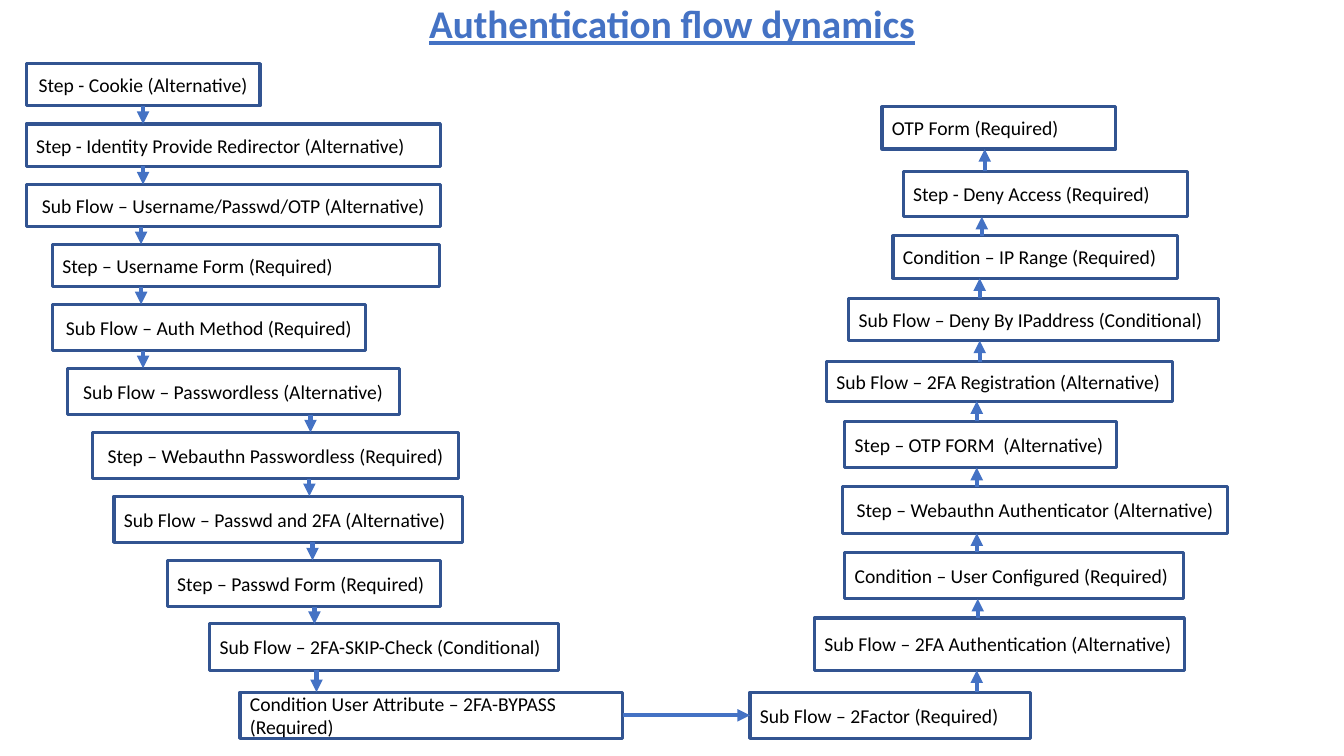
from dataclasses import dataclass
from itertools import pairwise

from lxml.etree import SubElement
from pptx import Presentation
from pptx.dml.color import RGBColor
from pptx.enum.shapes import MSO_CONNECTOR, MSO_SHAPE
from pptx.enum.text import MSO_ANCHOR, PP_ALIGN
from pptx.oxml.ns import qn
from pptx.shapes.autoshape import Shape
from pptx.shapes.connector import Connector
from pptx.slide import Slide
from pptx.text.text import Font
from pptx.util import Pt

HUES = {"blue": "4472C4", "navy": "325491", "white": "FFFFFF", "black": "000000"}
FACE = "Calibri"
TOP, LEFT, BOTTOM, RIGHT = range(4)


@dataclass(frozen=True)
class Step:
    """A box of the flow and the x of the arrow that leaves it."""
    text: str
    left: float
    top: float
    width: float
    height: float
    exit: float = 0
    mid: bool = False


DOWN = [
    Step("Step - Cookie (Alternative)", 18.7, 45.4, 167, 30.2, 102.2, True),
    Step("Step - Identity Provide Redirector (Alternative)", 18.7, 88.6, 295.9, 30.2, 102.2),
    Step("Sub Flow – Username/Passwd/OTP (Alternative)", 18.7, 131.8, 295.9, 30.2, 100.8, True),
    Step("Step – Username Form (Required)", 37.4, 174.5, 276.8, 30.2, 100.8),
    Step("Sub Flow – Auth Method (Required)", 37.4, 217.4, 223.9, 33.1, 102.2, True),
    Step("Sub Flow – Passwordless (Alternative)", 48.2, 263, 236.9, 33.1, 221.8, True),
    Step("Step – Webauthn Passwordless (Required)", 66.2, 308.9, 261.4, 33.1, 221, True),
    Step("Sub Flow – Passwd and 2FA (Alternative)", 81.4, 354.4, 249.1, 33.1, 223.2),
    Step("Step – Passwd Form (Required)", 119.5, 400.3, 195.1, 33.1, 224.6),
    Step("Sub Flow – 2FA-SKIP-Check (Conditional)", 149.8, 445.7, 249.1, 33.1, 226.1),
    Step("Condition User Attribute – 2FA-BYPASS (Required)", 171.4, 494.4, 273.6, 33.1),
]
UP = [
    Step("Sub Flow – 2Factor (Required)", 535.7, 494.4, 200.2, 33.1, 697.7),
    Step("Sub Flow – 2FA Authentication (Alternative)", 581.8, 441.4, 264.2, 37.4, 698.4),
    Step("Condition – User Configured (Required)", 603.4, 394.6, 241.9, 33.1, 697.7),
    Step("Step – Webauthn Authenticator (Alternative)", 601.9, 347.8, 275, 33.1, 697.7, True),
    Step("Step – OTP FORM  (Alternative)", 603.4, 301, 194.4, 33.1, 697.7),
    Step("Sub Flow – 2FA Registration (Alternative)", 590.4, 258.5, 247, 28.1, 699.8),
    Step("Sub Flow – Deny By IPaddress (Conditional)", 606.2, 213.1, 264.2, 30.2, 699.8),
    Step("Condition – IP Range (Required)", 637.9, 168.5, 203, 30.2, 701.3),
    Step("Step - Deny Access (Required)", 645.1, 122.4, 203, 32.4, 703.4),
    Step("OTP Form (Required)", 630, 76.3, 167, 30.2),
]


def hue(name: str) -> RGBColor:
    """Look up a colour by name."""
    return RGBColor.from_string(HUES[name])


def style(font: Font, size: float, tint: str) -> None:
    """Set face, size and colour of a font."""
    font.name, font.size = FACE, Pt(size)
    font.color.rgb = hue(tint)


def add_head(slide: Slide, width: int, height: int) -> None:
    """Fill and format the title."""
    title = slide.shapes.title
    title.left, title.top, title.width, title.height = 0, 0, width, height
    frame = title.text_frame
    frame.vertical_anchor = MSO_ANCHOR.TOP
    line = frame.paragraphs[0]
    line.alignment, line.line_spacing = PP_ALIGN.CENTER, 0.9
    run = line.add_run()
    run.text = "Authentication flow dynamics"
    style(run.font, 28, "blue")
    run.font.bold = run.font.underline = True


def add_box(slide: Slide, step: Step) -> Shape:
    """Draw the box of one step."""
    box = slide.shapes.add_shape(MSO_SHAPE.RECTANGLE, Pt(step.left), Pt(step.top),
                                 Pt(step.width), Pt(step.height))
    box.shadow.inherit = False
    box.fill.solid()
    box.fill.fore_color.rgb = hue("white")
    box.line.color.rgb = hue("navy")
    box.line.width = Pt(2.25)
    frame = box.text_frame
    frame.word_wrap, frame.vertical_anchor = True, MSO_ANCHOR.MIDDLE
    line = frame.paragraphs[0]
    line.alignment = PP_ALIGN.CENTER if step.mid else PP_ALIGN.LEFT
    run = line.add_run()
    run.text = step.text
    style(run.font, 14, "black")
    return box


def add_arrow(slide: Slide, x1: float, y1: float, x2: float, y2: float) -> Connector:
    """Draw a straight arrow."""
    arrow = slide.shapes.add_connector(MSO_CONNECTOR.STRAIGHT, Pt(x1), Pt(y1), Pt(x2), Pt(y2))
    arrow.line.color.rgb = hue("blue")
    arrow.line.width = Pt(3)
    SubElement(arrow.line._get_or_add_ln(), qn("a:tailEnd"), type="triangle")
    SubElement(arrow._element.spPr, qn("a:effectLst"))
    return arrow


def centred(step: Step, x: float) -> bool:
    """Tell whether x is the middle of a box."""
    return abs(step.left + step.width / 2 - x) < 0.5


def add_chain(slide: Slide, steps: list[Step], rising: bool) -> list[Shape]:
    """Draw a column of boxes and the arrows between them."""
    boxes = [add_box(slide, step) for step in steps]
    for (step, box), (goal, mark) in pairwise(zip(steps, boxes)):
        if rising:
            start, end = step.top, goal.top + goal.height
        else:
            start, end = step.top + step.height, goal.top
        arrow = add_arrow(slide, step.exit, start, step.exit, end)
        if centred(step, step.exit):
            arrow.begin_connect(box, TOP if rising else BOTTOM)
        if centred(goal, step.exit):
            arrow.end_connect(mark, BOTTOM if rising else TOP)
    return boxes


def main() -> None:
    """Build the slide and save it."""
    deck = Presentation()
    deck.slide_width, deck.slide_height = Pt(960), Pt(540)
    slide = deck.slides.add_slide(deck.slide_layouts[5])
    add_head(slide, deck.slide_width, deck.slide_height)
    last = add_chain(slide, DOWN, False)[-1]
    first = add_chain(slide, UP, True)[0]
    tail, head = DOWN[-1], UP[0]
    level = tail.top + tail.height / 2
    link = add_arrow(slide, tail.left + tail.width, level, head.left, level)
    link.begin_connect(last, RIGHT)
    link.end_connect(first, LEFT)
    deck.save("out.pptx")


if __name__ == "__main__":
    main()
